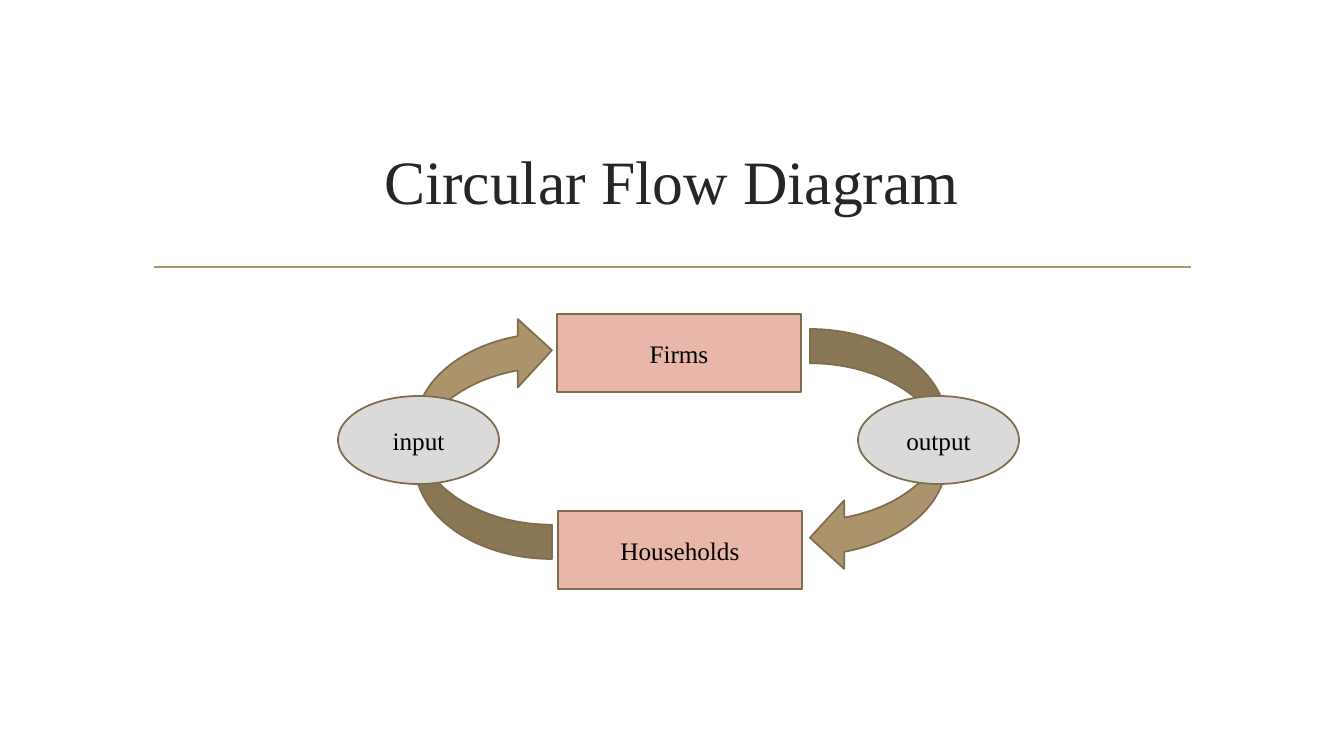
import pptx
import pptx.util
import pptx.dml.color
import pptx.enum.shapes
import pptx.enum.text
import lxml.etree

PX = 914400 / 100.8
SHAPE = pptx.enum.shapes.MSO_SHAPE
OUTLINE = "7F6D4F"


def px(*lengths):
    return [pptx.util.Emu(round(n * PX)) for n in lengths]


def write(sp, text, size=18, color="000000"):
    tf = sp.text_frame
    tf.word_wrap = True
    tf.vertical_anchor = pptx.enum.text.MSO_ANCHOR.MIDDLE
    p = tf.paragraphs[0]
    p.alignment = pptx.enum.text.PP_ALIGN.CENTER
    r = p.add_run()
    r.text = text
    r.font.name = "Times New Roman"
    r.font.size = pptx.util.Pt(size)
    r.font.color.rgb = pptx.dml.color.RGBColor.from_string(color)


prs = pptx.Presentation()
prs.slide_width, prs.slide_height = px(1344, 756)
s = prs.slides.add_slide(prs.slide_layouts[5])

# Title
title = s.shapes.title
title.left, title.top, title.width, title.height = px(143, 108, 1058, 144)
write(title, "Circular Flow Diagram", size=44, color="262626")

# Rule under the title
rule = s.shapes.add_connector(pptx.enum.shapes.MSO_CONNECTOR.STRAIGHT,
                              *px(154, 267, 1191, 267))
rule.line.color.rgb = pptx.dml.color.RGBColor.from_string("AB946B")
rule.line.width = pptx.util.Pt(1.25)
lxml.etree.SubElement(rule._element.spPr, pptx.oxml.ns.qn("a:effectLst"))

# Flow diagram, back to front: kind, box, fill, label, flip
parts = [
    (SHAPE.RECTANGLE, (557, 314, 244, 78), "E9B7AA", "Firms", None),
    (SHAPE.RECTANGLE, (558, 511, 244, 78), "E9B7AA", "Households", None),
    (SHAPE.CURVED_RIGHT_ARROW, (415, 316, 137, 243), "AB946B", None, "flipV"),
    (SHAPE.OVAL, (338, 396, 161, 88), "DADADA", "input", None),
    (SHAPE.CURVED_RIGHT_ARROW, (810, 329, 137, 243), "AB946B", None, "flipH"),
    (SHAPE.OVAL, (858, 396, 161, 88), "DADADA", "output", None),
]
for kind, box, fill, label, flip in parts:
    sp = s.shapes.add_shape(kind, *px(*box))
    sp.shadow.inherit = False
    sp.fill.solid()
    sp.fill.fore_color.rgb = pptx.dml.color.RGBColor.from_string(fill)
    sp.line.color.rgb = pptx.dml.color.RGBColor.from_string(OUTLINE)
    sp.line.width = pptx.util.Pt(1.25)
    if label:
        write(sp, label)
    if flip:
        sp._element.spPr.get_or_add_xfrm().set(flip, "1")

prs.save("out.pptx")
